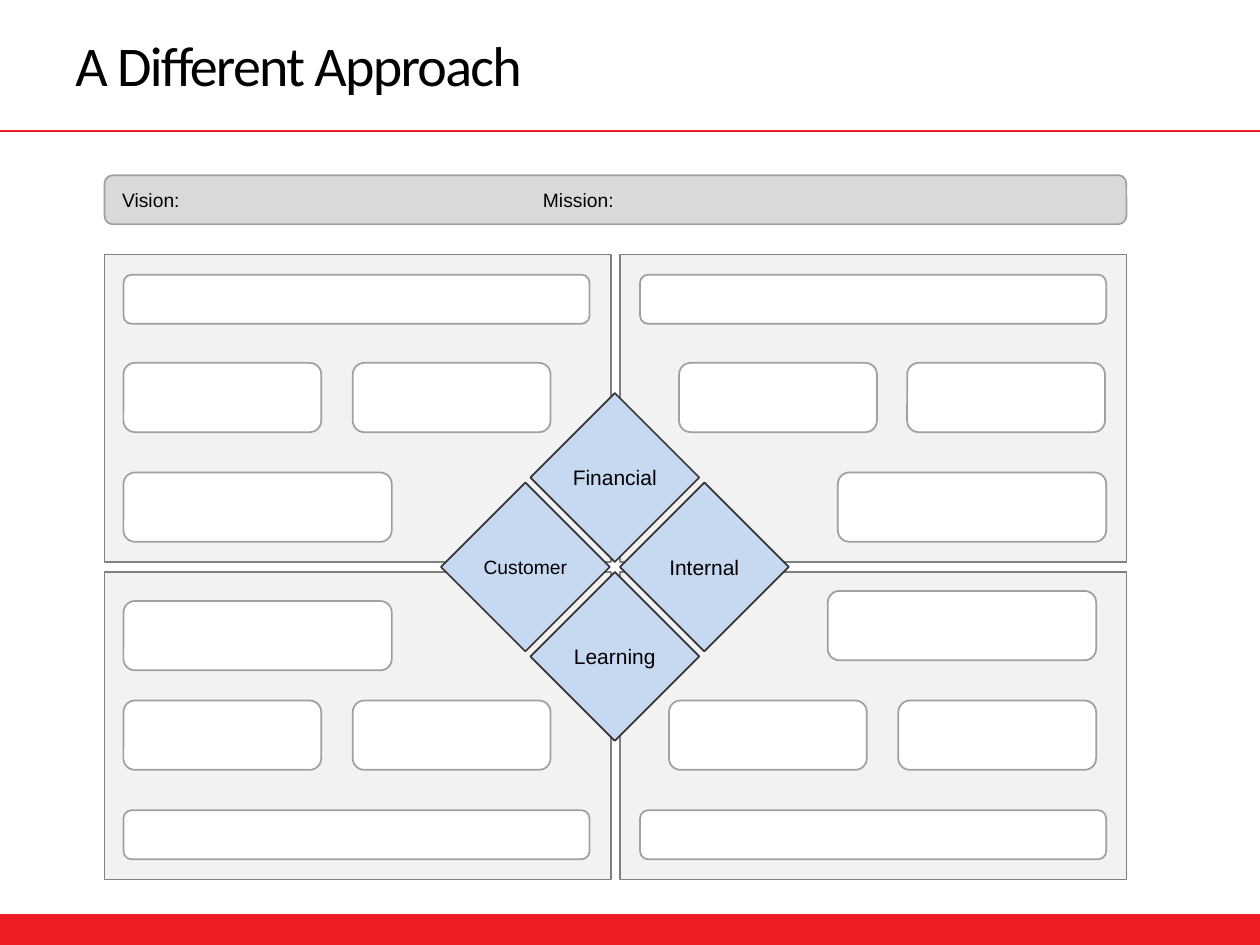
from itertools import product
from typing import NamedTuple

from lxml.etree import SubElement
from pptx import Presentation
from pptx.dml.color import RGBColor
from pptx.enum.shapes import MSO_CONNECTOR, MSO_SHAPE
from pptx.enum.text import MSO_ANCHOR, PP_ALIGN
from pptx.oxml.ns import qn
from pptx.util import Inches, Pt

RED = "EE1C25"
BLACK = "000000"


class Style(NamedTuple):
    preset: MSO_SHAPE
    fill: str
    line: str
    line_width: float = 1


class Box(NamedTuple):
    left: float
    top: float
    width: float
    height: float


class Perspective(NamedTuple):
    name: str
    left: float
    top: float
    size: float = 12


class CardRow(NamedTuple):
    lefts: tuple[float, ...]
    top: float
    width: float
    height: float = 0.55


FOOTER = Style(MSO_SHAPE.RECTANGLE, RED, RED, 2.08)
PANEL = Style(MSO_SHAPE.RECTANGLE, "F2F2F2", "808080")
DIAMOND = Style(MSO_SHAPE.DIAMOND, "C6D9F1", "353535")
CARD = Style(MSO_SHAPE.ROUNDED_RECTANGLE, "FFFFFF", "A0A0A0")
BANNER = Style(MSO_SHAPE.ROUNDED_RECTANGLE, "D9D9D9", "A0A0A0")

PERSPECTIVES = [
    Perspective("Financial", 4.21, 3.12),
    Perspective("Learning", 4.21, 4.54),
    Perspective("Internal", 4.92, 3.83),
    Perspective("Customer", 3.5, 3.83, 11),
]

CARD_ROWS = [
    CardRow((0.98, 5.08), 2.18, 3.7, 0.39),
    CardRow((0.98, 2.8, 5.39, 7.2), 2.88, 1.57),
    CardRow((0.98, 6.65), 3.75, 2.13),
    CardRow((0.98,), 4.77, 2.13),
    CardRow((6.57,), 4.69, 2.13),
    CardRow((0.98, 2.8, 5.31, 7.13), 5.56, 1.57),
    CardRow((0.98, 5.08), 6.43, 3.7, 0.39),
]


def color(value: str) -> RGBColor:
    return RGBColor.from_string(value)


def draw_box(slide, style: Style, box: Box):
    shape = slide.shapes.add_shape(style.preset, *map(Inches, box))
    shape.shadow.inherit = False
    shape.fill.solid()
    shape.fill.fore_color.rgb = color(style.fill)
    shape.line.color.rgb = color(style.line)
    shape.line.width = Pt(style.line_width)
    return shape


def write(shape, text: str, size: float, font: str = "Arial",
          align: PP_ALIGN = PP_ALIGN.LEFT, side: float = 0, vertical: float = 0,
          wrap: bool = True):
    frame = shape.text_frame
    frame.text = text
    frame.word_wrap = wrap
    frame.vertical_anchor = MSO_ANCHOR.MIDDLE
    frame.margin_left = frame.margin_right = Inches(side)
    frame.margin_top = frame.margin_bottom = Inches(vertical)
    paragraph = frame.paragraphs[0]
    paragraph.alignment = align
    for run in paragraph.runs:
        run.font.name = font
        run.font.size = Pt(size)
        run.font.color.rgb = color(BLACK)
    return paragraph


def draw_rule(slide, top: float) -> None:
    rule = slide.shapes.add_connector(
        MSO_CONNECTOR.STRAIGHT, Inches(0), Inches(top), Inches(10), Inches(top))
    rule.line.color.rgb = color(RED)
    rule.line.width = Pt(1.5)
    SubElement(rule._element.spPr, qn("a:effectLst"))


def draw_title(slide, text: str) -> None:
    title = slide.shapes.add_textbox(*map(Inches, Box(0.5, 0.15, 7.29, 0.72)))
    paragraph = write(title, text, 32, "Calibri", side=0.1)
    for run in paragraph.runs:
        run._r.get_or_add_rPr().set("spc", "-100")


def draw_perspective(slide, perspective: Perspective) -> None:
    diamond = draw_box(
        slide, DIAMOND, Box(perspective.left, perspective.top, 1.34, 1.34))
    write(diamond, perspective.name, perspective.size,
          align=PP_ALIGN.CENTER, vertical=0.05, wrap=False)


def draw_card_row(slide, row: CardRow) -> None:
    for left in row.lefts:
        draw_box(slide, CARD, Box(left, row.top, row.width, row.height))


def draw_banner(slide) -> None:
    banner = draw_box(slide, BANNER, Box(0.83, 1.39, 8.11, 0.39))
    paragraph = write(banner, "Vision:\tMission:", 11, side=0.12)
    tabs = SubElement(paragraph._p.get_or_add_pPr(), qn("a:tabLst"))
    SubElement(tabs, qn("a:tab"), pos=str(Inches(3.34)), algn="l")


def main() -> None:
    deck = Presentation()
    deck.slide_width, deck.slide_height = Inches(10), Inches(7.5)
    slide = deck.slides.add_slide(deck.slide_layouts[6])

    draw_box(slide, FOOTER, Box(0, 7.27, 10, 0.24))
    draw_rule(slide, 1.04)
    for top, left in product((4.54, 2.02), (0.83, 4.92)):
        draw_box(slide, PANEL, Box(left, top, 4.02, 2.44))
    draw_title(slide, "A Different Approach")
    for perspective in PERSPECTIVES:
        draw_perspective(slide, perspective)
    for row in CARD_ROWS:
        draw_card_row(slide, row)
    draw_banner(slide)

    deck.save("out.pptx")


if __name__ == "__main__":
    main()
